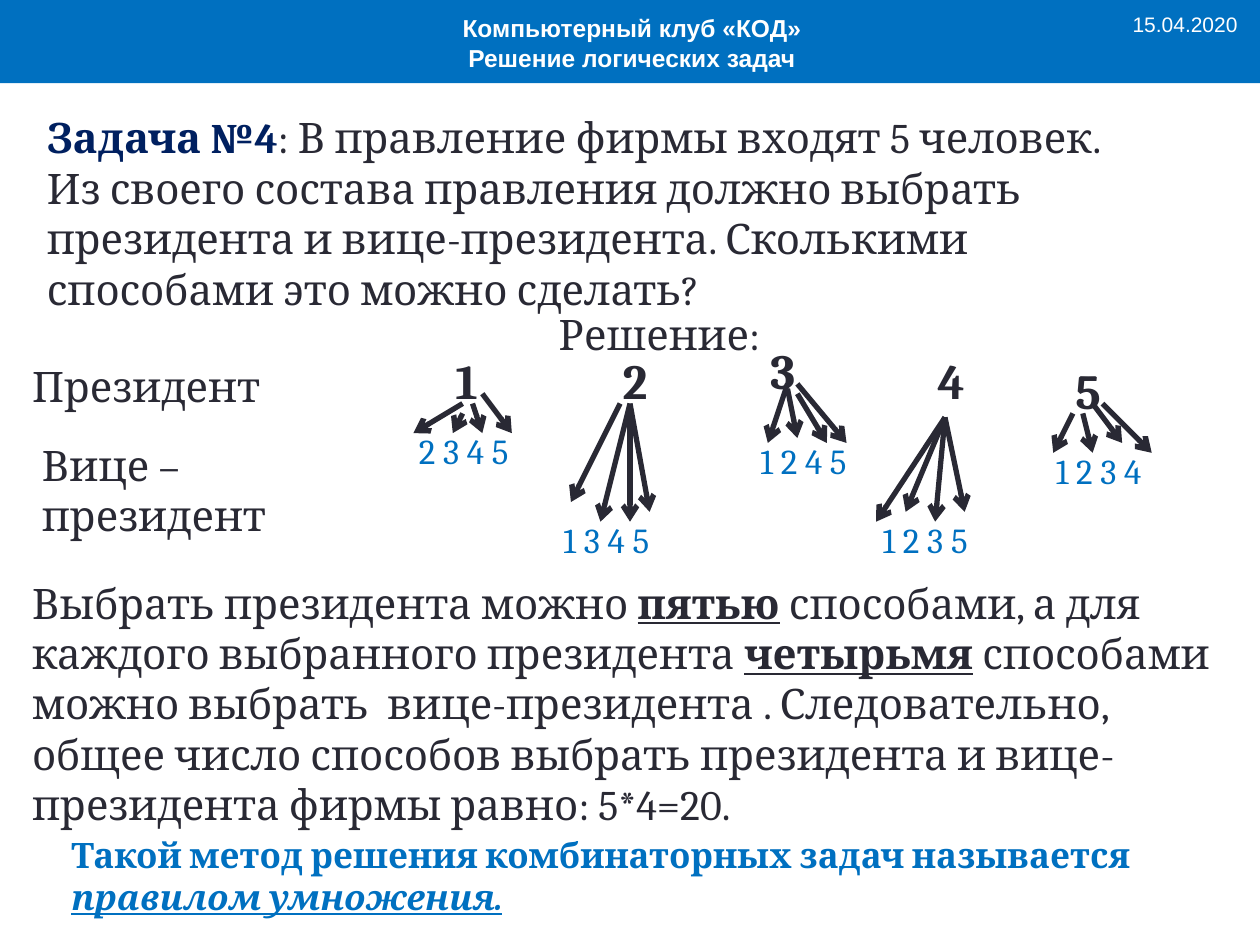
from dataclasses import dataclass

from lxml import etree
from pptx import Presentation
from pptx.dml.color import RGBColor
from pptx.enum.shapes import MSO_CONNECTOR, MSO_SHAPE
from pptx.enum.text import MSO_ANCHOR, MSO_AUTO_SIZE, PP_ALIGN
from pptx.oxml.ns import qn
from pptx.util import Inches, Pt

STRAIGHT, RECTANGLE = MSO_CONNECTOR.STRAIGHT, MSO_SHAPE.RECTANGLE
LEFT, CENTER = PP_ALIGN.LEFT, PP_ALIGN.CENTER
TOP, MIDDLE = MSO_ANCHOR.TOP, MSO_ANCHOR.MIDDLE
GROW, FIXED = MSO_AUTO_SIZE.SHAPE_TO_FIT_TEXT, MSO_AUTO_SIZE.NONE

# The page is a grid of 128 columns by 96 rows of square cells
COLUMNS, ROWS = 128, 96
WIDTH, HEIGHT = Inches(10), Inches(7.5)

INK, BLUE, NAVY, WHITE = "292934", "0070C0", "002060", "FFFFFF"
BODY = {"name": "Cambria", "size": 24, "color": INK}
DIGIT = {**BODY, "size": 28, "bold": True}
CHOICE = {**BODY, "size": 20, "color": BLUE}
RULE = {**CHOICE, "bold": True}
STRESS = {"bold": True, "underline": True}
DATE = {"name": "Arial", "size": 12, "color": WHITE}
TITLE = {**DATE, "size": 14, "bold": True}


@dataclass
class Box:
    left: float
    top: float
    width: float
    height: float

    def inner(self, left, top, width, height):
        """A box whose position is counted from this box's corner."""
        return Box(self.left + left, self.top + top, width, height)

    def place(self):
        return (across(self.left), down(self.top),
                across(self.width), down(self.height))


@dataclass
class Fan:
    """One president with arrows to every possible vice-president."""
    box: Box
    president: str
    choices: str
    choices_box: tuple
    align: int
    arrows: list


FANS = [
    Fan(Box(45, 35, 3, 27), "1", "2 3 4 5 ", (-7, 8, 19, 5.6), CENTER,
        [(2, 6, -3, 9), (2, 7, 1, 9), (3, 6, 4, 9), (4, 5, 7, 9)]),
    Fan(Box(62, 35, 7, 7.3), "2", "1 3 4 5 ", (-9, 17, 18, 5.6), CENTER,
        [(2, 6, 4, 17), (2, 6, 2, 18), (2, 6, -1, 18), (1, 6, -4, 16)]),
    Fan(Box(77, 34, 6, 7.3), "3", "1 2 4 5", (-1, 10, 14, 9.5), LEFT,
        [(4, 5, 9, 11), (4, 6, 7, 11), (3, 5.5, 4, 10.5), (3, 5, 1, 11)]),
    Fan(Box(94, 35, 4, 7.3), "4", "1 2 3 5", (-9, 17, 18, 5.6), CENTER,
        [(2, 7.4, 4, 17), (2, 7.4, 1, 18), (2, 7.4, -2, 17), (2, 7.4, -5, 18)]),
    Fan(Box(108, 36, 9, 7.3), "5", "1 2 3 4", (-2, 9, 19, 5.6), LEFT,
        [(4, 5, 9, 10), (3, 5, 6, 9), (2, 6, 3, 10), (1, 6, -1, 10)]),
]


def across(columns):
    return round(WIDTH * columns / COLUMNS)


def down(rows):
    return round(HEIGHT * rows / ROWS)


def color(value):
    return RGBColor.from_string(value)


def apply_font(font, style):
    for key, value in style.items():
        if key == "color":
            font.color.rgb = color(value)
        else:
            setattr(font, key, Pt(value) if key == "size" else value)


def add_text(page, box, spans, style, align=LEFT, anchor=TOP, fit=GROW):
    """Write spans of (text, changes to the style) as one paragraph."""
    frame = page.shapes.add_textbox(*box.place()).text_frame
    settings = {"word_wrap": True, "auto_size": fit, "vertical_anchor": anchor}
    for key, value in settings.items():
        setattr(frame, key, value)
    para = frame.paragraphs[0]
    para.alignment = align
    for text, changes in spans:
        for index, line in enumerate(text.split("\n")):
            if index:
                para.add_line_break()
            span = para.add_run()
            span.text = line
            apply_font(span.font, {**style, **changes})


def add_arrow(page, start, end):
    arrow = page.shapes.add_connector(
        STRAIGHT, across(start[0]), down(start[1]), across(end[0]), down(end[1]))
    arrow.line.width = Pt(3)
    arrow.line.color.rgb = color(INK)
    etree.SubElement(arrow.line._get_or_add_ln(), qn("a:tailEnd"), type="arrow")
    etree.SubElement(arrow._element.spPr, qn("a:effectLst"))


def add_header(page, box):
    # Blue band with the club title and the date
    band = page.shapes.add_shape(RECTANGLE, *box.place())
    band.shadow.inherit = False
    band.fill.solid()
    band.fill.fore_color.rgb = color(BLUE)
    band.line.fill.background()
    add_text(page, box.inner(113.8, 0.1, 14.2, 4.6), [("15.04.2020", {})],
             DATE, anchor=MIDDLE, fit=FIXED)
    title = "Компьютерный клуб «КОД»\nРешение логических задач"
    add_text(page, box.inner(22.7, 0.25, 83, 8.2), [(title, {})],
             TITLE, CENTER, MIDDLE, FIXED)


def add_task(page, box):
    add_text(page, box, [
        ("Задача №4", {"color": NAVY, "bold": True}),
        (": В правление фирмы входят 5 человек. Из своего состава правления "
         "должно выбрать президента и вице-президента. Сколькими способами "
         "это можно сделать?", {}),
    ], BODY)


def add_labels(page, box):
    # Heading of the solution and names of the two levels
    add_text(page, box.inner(47, 0, 36, 6.4), [("Решение:", {})], BODY, CENTER)
    add_text(page, box.inner(0, 5.25, 28, 6.4), [("Президент", {})], BODY)
    add_text(page, box.inner(1, 13.25, 32, 11.7),
             [("Вице – президент", {})], BODY)


def add_fan(page, fan):
    box = fan.box
    add_text(page, box, [(fan.president, {})], DIGIT)
    add_text(page, box.inner(*fan.choices_box), [(fan.choices, {})],
             CHOICE, fan.align)
    for x1, y1, x2, y2 in fan.arrows:
        add_arrow(page, (box.left + x1, box.top + y1),
                  (box.left + x2, box.top + y2))


def add_conclusion(page, box):
    # Reasoning, then the name of the rule
    add_text(page, box.inner(0, 0, 126, 27.1), [
        ("Выбрать президента можно ", {}),
        ("пятью", STRESS),
        (" способами, а для каждого выбранного президента ", {}),
        ("четырьмя", STRESS),
        (" способами можно выбрать  вице-президента . Следовательно, общее "
         "число способов выбрать президента и вице-президента фирмы равно: "
         "5*4=20.", {}),
    ], BODY)
    add_text(page, box.inner(4, 26, 117, 9.9), [
        ("Такой метод решения комбинаторных задач называется ", {}),
        ("правилом умножения.", {"italic": True, "underline": True}),
    ], RULE)


def main():
    deck = Presentation()
    deck.slide_width, deck.slide_height = WIDTH, HEIGHT
    page = deck.slides.add_slide(deck.slide_layouts[6])
    add_header(page, Box(0, 0, COLUMNS, 8.45))
    add_task(page, Box(3.5, 10.75, 115, 22))
    add_labels(page, Box(2, 30.75, 83, 25))
    for fan in FANS:
        add_fan(page, fan)
    add_conclusion(page, Box(2, 58, 126, 36))
    deck.save("out.pptx")


if __name__ == "__main__":
    main()
